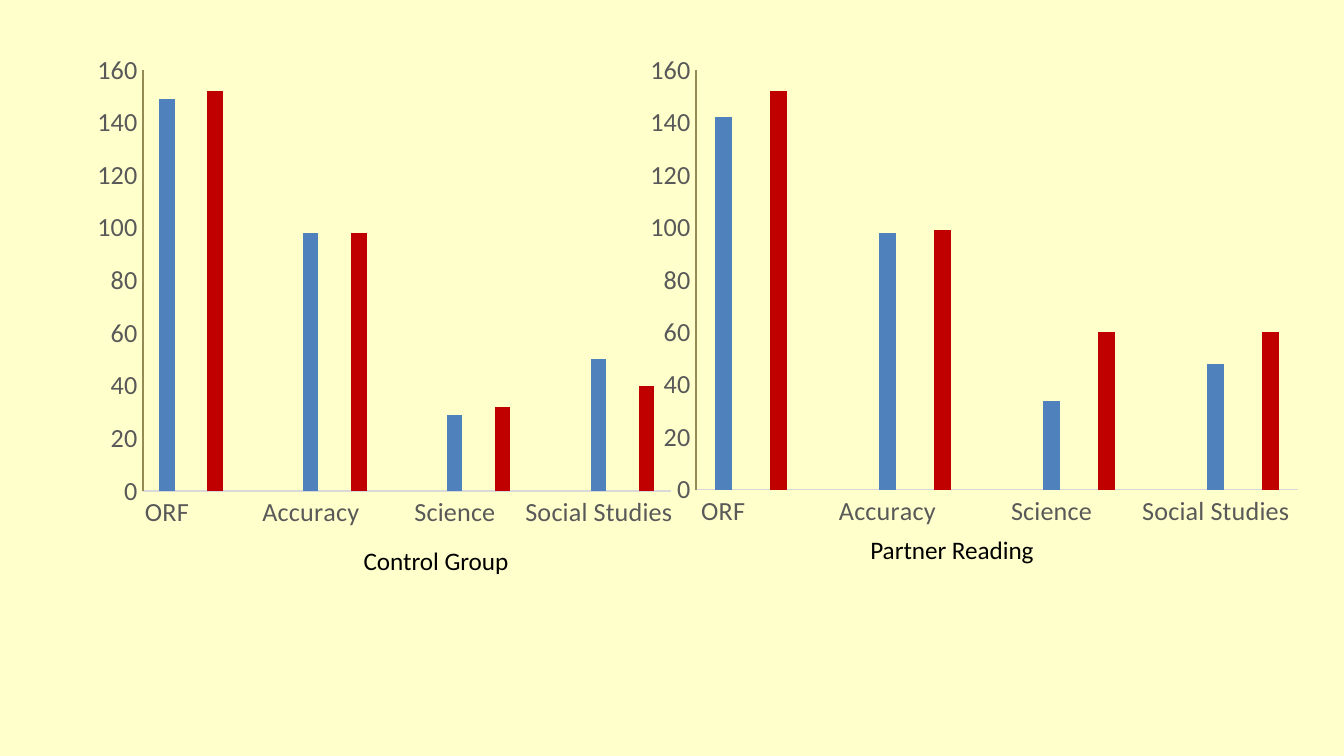
from lxml import etree
from pptx import Presentation
from pptx.chart.data import CategoryChartData
from pptx.dml.color import RGBColor as RGB
from pptx.enum.chart import XL_CHART_TYPE as CT, XL_TICK_MARK as TM
from pptx.enum.text import PP_ALIGN as AL
from pptx.oxml import parse_xml
from pptx.oxml.ns import qn
from pptx.util import Pt

PX = 914400 / 134.4
COLORS = {"bg": "FFFFCC", "before": "4F81BD", "after": "C00000", "tick": "595959",
          "cat_line": "D9D9D9", "val_line": "948A54", "text": "000000"}
FONT = "Calibri"
NS = ('xmlns:c="http://schemas.openxmlformats.org/drawingml/2006/chart" '
      'xmlns:a="http://schemas.openxmlformats.org/drawingml/2006/main"')
MEASURES = ["ORF", "Accuracy", "Science", "Social Studies"]

# Chart box, plot box and caption box in px; one (before, after) pair per measure
GROUPS = [
    {"caption": "Control Group", "box": (86, 44, 599, 495),
     "plot": (143, 70, 528, 421), "caption_box": (285, 539, 302, 44),
     "pairs": [(149, 152), (98, 98), (29, 32), (50, 40)]},
    {"caption": "Partner Reading", "box": (637, 44, 675, 493),
     "plot": (696, 70, 602, 420), "caption_box": (801, 528, 302, 44),
     "pairs": [(142, 152), (98, 99), (34, 60), (48, 60)]},
]


def px(*lengths):
    return [round(n * PX) for n in lengths]


def color(name):
    return RGB.from_string(COLORS[name])


def set_attrs(obj, values):
    for name, value in values.items():
        setattr(obj, name, value)


def set_font(font, size, name):
    set_attrs(font, {"name": FONT, "size": Pt(size)})
    font.color.rgb = color(name)


def place_plot(chart, box, plot):
    """Fix the inner plot area as fractions of the chart box."""
    x, y, w, h = box
    left, top, width, height = plot
    parts = {"x": (left - x) / w, "y": (top - y) / h, "w": width / w, "h": height / h}
    modes = "".join(f'<c:{k}Mode val="edge"/>' for k in "xy")
    sizes = "".join(f'<c:{k} val="{v:.4f}"/>' for k, v in parts.items())
    area = chart._chartSpace.chart.plotArea
    for old in area.findall(qn("c:layout")):
        area.remove(old)
    area.insert(0, parse_xml(
        f'<c:layout {NS}><c:manualLayout><c:layoutTarget val="inner"/>'
        f'{modes}{sizes}</c:manualLayout></c:layout>'))


def style_axis(axis, line):
    set_attrs(axis, {"has_major_gridlines": False, "major_tick_mark": TM.NONE,
                     "minor_tick_mark": TM.NONE})
    set_font(axis.tick_labels.font, 14, "tick")
    axis.format.line.color.rgb = color(line)
    axis.format.line.width = Pt(0.75)


def add_chart(s, box, plot, pairs):
    # An empty slot separates the pairs
    cats, vals = [], []
    for measure, pair in zip(MEASURES, pairs):
        cats += [measure, "", ""]
        vals += [*pair, None]
    data = CategoryChartData()
    data.categories = cats[:-1]
    data.add_series("Series 1", vals[:-1])
    chart = s.shapes.add_chart(CT.COLUMN_CLUSTERED, *px(*box), data).chart
    set_attrs(chart, {"has_legend": False, "has_title": False})
    set_font(chart.font, 14, "text")
    chart._chartSpace.chart.addnext(parse_xml(
        f'<c:spPr {NS}><a:noFill/><a:ln><a:noFill/></a:ln></c:spPr>'))
    place_plot(chart, box, plot)

    # Bars
    bars = chart.plots[0]
    set_attrs(bars, {"gap_width": 219, "overlap": -27, "vary_by_categories": False})
    series = bars.series[0]
    series.invert_if_negative = False
    series.format.fill.solid()
    series.format.fill.fore_color.rgb = color("before")
    for i in range(1, len(cats) - 1, 3):
        fill = series.points[i].format.fill
        fill.solid()
        fill.fore_color.rgb = color("after")

    # Axes
    style_axis(chart.category_axis, "cat_line")
    style_axis(chart.value_axis, "val_line")
    set_attrs(chart.value_axis, {"minimum_scale": 0, "maximum_scale": 160,
                                 "major_unit": 20})

    # Show every category label on a single line
    ax = chart.category_axis._element
    ax.find(qn("c:txPr")).find(qn("a:bodyPr")).set("rot", "-60000000")
    skip = etree.Element(qn("c:tickLblSkip"), val="1")
    ax.find(qn("c:noMultiLvlLbl")).addprevious(skip)


def add_caption(s, box, text):
    tf = s.shapes.add_textbox(*px(*box)).text_frame
    tf.word_wrap = True
    p = tf.paragraphs[0]
    p.alignment = AL.CENTER
    r = p.add_run()
    r.text = text
    set_font(r.font, 13.5, "text")


def main():
    prs = Presentation()
    prs.slide_width, prs.slide_height = px(1344, 756)
    s = prs.slides.add_slide(prs.slide_layouts[6])
    s.background.fill.solid()
    s.background.fill.fore_color.rgb = color("bg")
    for group in GROUPS:
        add_chart(s, group["box"], group["plot"], group["pairs"])
    for group in GROUPS:
        add_caption(s, group["caption_box"], group["caption"])
    prs.save("out.pptx")


if __name__ == "__main__":
    main()
